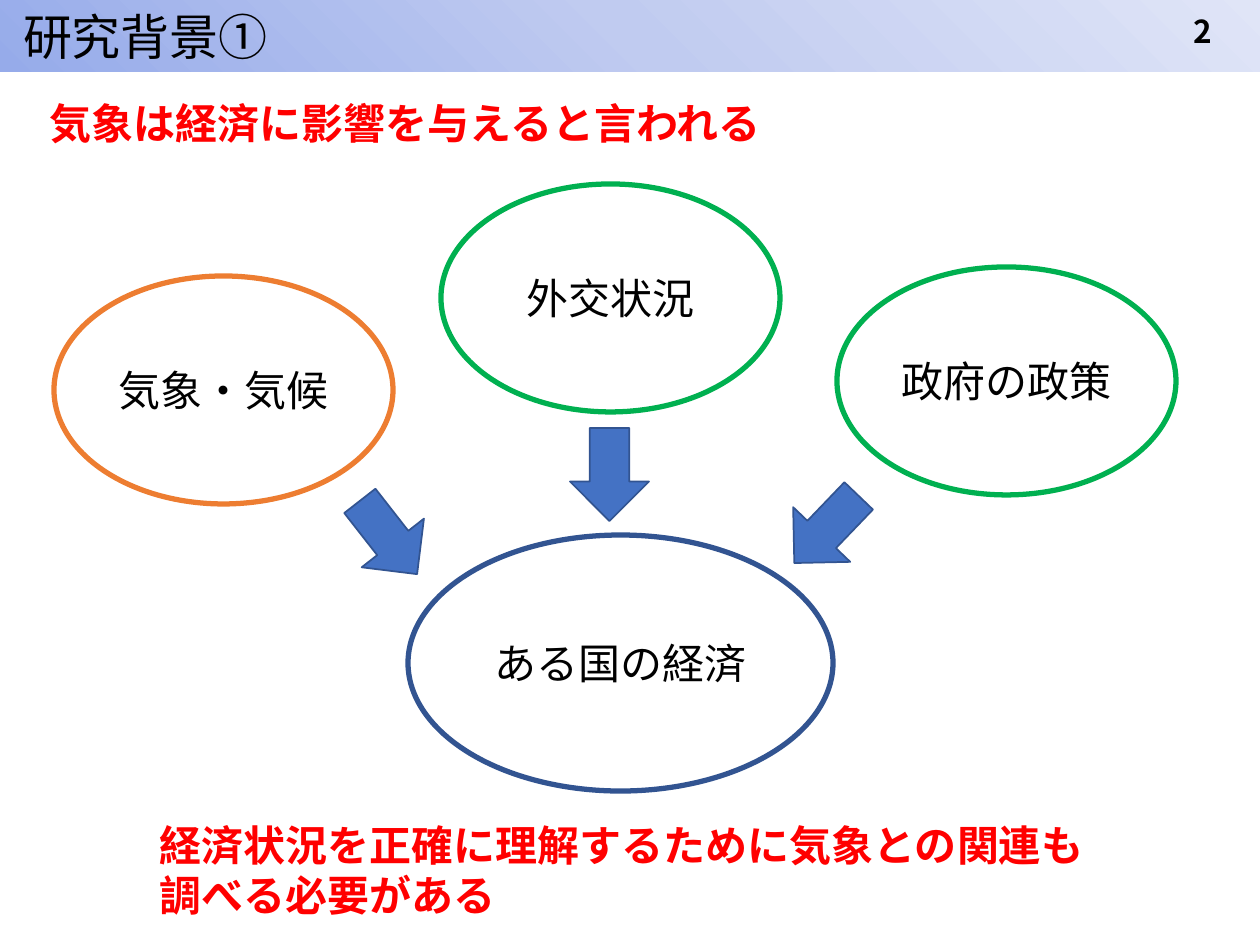
"""Build the research background slide."""
from copy import deepcopy

from lxml.etree import SubElement
from pptx import Presentation
from pptx.dml.color import RGBColor
from pptx.enum.shapes import MSO_SHAPE as Shape
from pptx.enum.text import MSO_ANCHOR as Anchor, MSO_AUTO_SIZE as Auto, PP_ALIGN as Align
from pptx.oxml.ns import qn
from pptx.util import Emu, Pt

PX = 914400 // 126
FONT = "Noto Sans CJK JP"
BLACK = RGBColor(0x00, 0x00, 0x00)
RED = RGBColor(0xFF, 0x00, 0x00)
GREEN = RGBColor(0x00, 0xB0, 0x50)
ORANGE = RGBColor(0xED, 0x7D, 0x31)
BLUE = RGBColor(0x44, 0x72, 0xC4)
NAVY = RGBColor(0x32, 0x54, 0x91)
BAND = [RGBColor(0x96, 0xAB, 0xEA), RGBColor(0xC0, 0xCB, 0xF0), RGBColor(0xE0, 0xE5, 0xF7)]


def px(*sizes):
    return [Emu(size * PX) for size in sizes]


def write(shape, lines, size, color=BLACK, bold=False, align=Align.LEFT, anchor=Anchor.TOP):
    frame = shape.text_frame
    frame.word_wrap = True
    frame.auto_size = Auto.NONE
    frame.vertical_anchor = anchor
    for i, line in enumerate(lines):
        para = frame.add_paragraph() if i else frame.paragraphs[0]
        para.alignment = align
        run = para.add_run()
        run.text = line
        font = run.font
        font.name, font.size, font.bold = FONT, Pt(size), bold
        font.color.rgb = color
        SubElement(run._r.get_or_add_rPr(), qn("a:ea")).set("typeface", FONT)


def add_title(slide, text, box):
    title = slide.shapes.title
    title.left, title.top, title.width, title.height = px(*box)
    fill = title.fill
    fill.gradient()
    fill.gradient_angle = 45
    first = fill.gradient_stops[0]._gs
    first.addnext(deepcopy(first))
    for i, (stop, color) in enumerate(zip(fill.gradient_stops, BAND)):
        stop.position = i / 2
        stop.color.rgb = color
    write(title, [text], 28)
    title.text_frame.margin_left = Emu(23 * PX)


def add_text(slide, lines, box, size, **style):
    write(slide.shapes.add_textbox(*px(*box)), lines, size, **style)


def add_shape(slide, kind, box, line, width):
    shape = slide.shapes.add_shape(kind, *px(*box))
    shape.shadow.inherit = False
    shape.fill.background()
    shape.line.color.rgb = line
    shape.line.width = Pt(width)
    return shape


def add_oval(slide, text, box, line):
    oval = add_shape(slide, Shape.OVAL, box, line, 3)
    write(oval, [text], 24, align=Align.CENTER, anchor=Anchor.MIDDLE)


def add_arrow(slide, left, top, turn):
    arrow = add_shape(slide, Shape.DOWN_ARROW, (left, top, 79, 93), NAVY, 1)
    arrow.fill.solid()
    arrow.fill.fore_color.rgb = BLUE
    arrow.rotation = turn


def main():
    deck = Presentation()
    deck.slide_width, deck.slide_height = px(1260, 945)
    slide = deck.slides.add_slide(deck.slide_layouts[5])
    add_title(slide, "研究背景①", (0, 0, 1265, 72))
    add_text(slide, ["気象は経済に影響を与えると言われる"], (37, 91, 784, 63), 24, color=RED, bold=True)
    add_text(slide, ["2"], (941, 6, 284, 50), 18, bold=True, align=Align.RIGHT, anchor=Anchor.MIDDLE)
    add_oval(slide, "ある国の経済", (408, 535, 425, 256), NAVY)
    add_text(slide, ["経済状況を正確に理解するために気象との関連も", "調べる必要がある"],
             (147, 813, 969, 115), 24, color=RED, bold=True)
    for text, left, top, line in [("政府の政策", 837, 267, GREEN),
                                  ("外交状況", 441, 184, GREEN),
                                  ("気象・気候", 54, 276, ORANGE)]:
        add_oval(slide, text, (left, top, 339, 228), line)
    for left, top, turn in [(570, 428, 0), (787, 483, 43.8), (349, 491, 322)]:
        add_arrow(slide, left, top, turn)
    deck.save("out.pptx")


if __name__ == "__main__":
    main()
